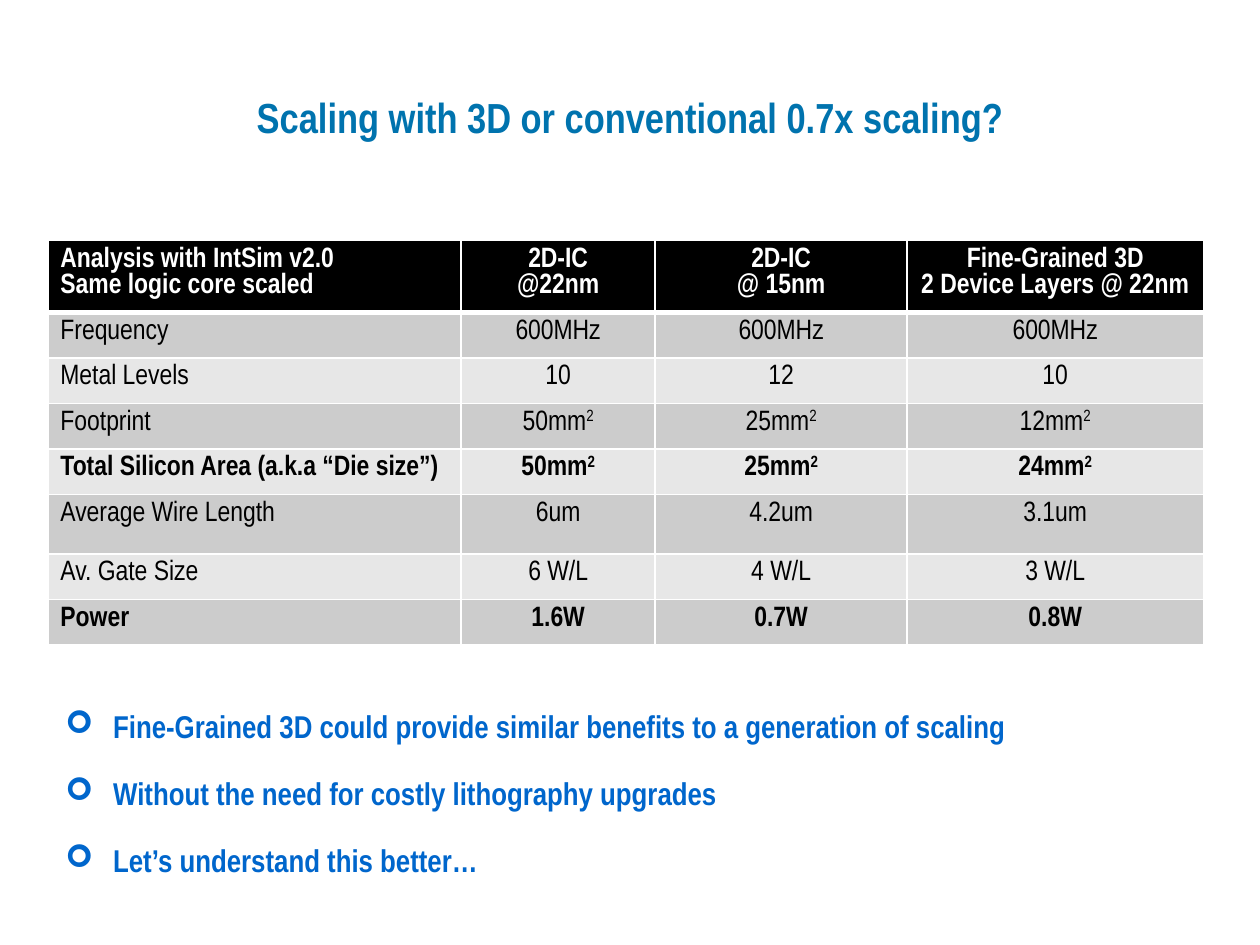
import dataclasses
import pptx
import pptx.dml.color
import pptx.enum.text
import pptx.oxml.ns
import pptx.util
import lxml.etree

ALIGN = pptx.enum.text.PP_ALIGN
ANCHOR = pptx.enum.text.MSO_ANCHOR
COLS, ROWS = 100, 75


@dataclasses.dataclass(frozen=True)
class Theme:
    font: str = "Arial Narrow"
    title: str = "0073AE"
    point: str = "0066CC"
    ink: str = "000000"
    white: str = "FFFFFF"
    bands: tuple = ("CCCCCC", "E7E7E7")
    large: int = 24
    mid: int = 18
    small: int = 16
    thin: int = 1
    thick: int = 3


THEME = Theme()
HEAD = "Scaling with 3D or conventional 0.7x scaling?"
WIDTHS = (3.28, 1.54, 2, 2.35)
HEIGHTS = (0.57, 0.36, 0.36, 0.36, 0.36, 0.47, 0.36, 0.36)
BOLD = (0, 4, 7)
DATA = (
    ("Analysis with IntSim v2.0\nSame logic core scaled", "2D-IC\n@22nm",
     "2D-IC\n@ 15nm", "Fine-Grained 3D\n2 Device Layers @ 22nm"),
    ("Frequency", "600MHz", "600MHz", "600MHz"),
    ("Metal Levels", "10", "12", "10"),
    ("Footprint", "50mm^2", "25mm^2", "12mm^2"),
    ("Total Silicon Area (a.k.a “Die size”)", "50mm^2", "25mm^2", "24mm^2"),
    ("Average Wire Length", "6um", "4.2um", "3.1um"),
    ("Av. Gate Size", "6 W/L", "4 W/L", "3 W/L"),
    ("Power", "1.6W", "0.7W", "0.8W"),
)
POINTS = (
    "Fine-Grained 3D could provide similar benefits to a generation of scaling\n"
    "Without the need for costly lithography upgrades\n"
    "Let’s understand this better…"
)


def tint(code):
    return pptx.dml.color.RGBColor.from_string(code)


def add_node(parent, tag, **attrs):
    node = lxml.etree.SubElement(parent, pptx.oxml.ns.qn(tag))
    for key, value in attrs.items():
        node.set(key, str(value))
    return node


def write(frame, text, size, color, bold=False, align=ALIGN.LEFT,
          lead=None, gap=0, mark=None, dent=0):
    for index, line in enumerate(text.split("\n")):
        para = frame.paragraphs[0] if index == 0 else frame.add_paragraph()
        para.alignment = align
        if lead:
            para.line_spacing = lead
        if index and gap:
            para.space_before = pptx.util.Pt(gap)
        if mark:
            props = para._p.get_or_add_pPr()
            props.set("marL", str(dent))
            props.set("indent", str(-dent))
            add_node(props, "a:buFont", typeface="Wingdings")
            add_node(props, "a:buChar", char=mark)
        for level, part in enumerate(line.split("^")):
            run = para.add_run()
            run.text = part
            font = run.font
            font.name, font.bold = THEME.font, bold
            font.size = pptx.util.Pt(size)
            font.color.rgb = tint(color)
            if level:
                run._r.get_or_add_rPr().set("baseline", "30000")


def edge(cell, side, width):
    props = cell._tc.get_or_add_tcPr()
    line = add_node(props, "a:ln" + side, w=pptx.util.Pt(width))
    fill = add_node(line, "a:solidFill")
    add_node(fill, "a:srgbClr", val=THEME.white)


def draw_title(slide, box):
    title = slide.shapes.title
    title.left, title.top, title.width, title.height = box
    title.text_frame.vertical_anchor = ANCHOR.MIDDLE
    write(title.text_frame, HEAD, THEME.large, THEME.title,
          bold=True, align=ALIGN.CENTER)


def draw_table(slide, box):
    grid = slide.shapes.add_table(len(DATA), len(WIDTHS), *box).table
    for col, share in zip(grid.columns, WIDTHS):
        col.width = int(box[2] * share / sum(WIDTHS))
    for row, share in zip(grid.rows, HEIGHTS):
        row.height = int(box[3] * share / sum(HEIGHTS))
    for r, texts in enumerate(DATA):
        shade = THEME.bands[(r - 1) % 2] if r else THEME.ink
        for c, text in enumerate(texts):
            cell = grid.cell(r, c)
            for side in "LRTB":
                heavy = (r, side) in ((0, "B"), (1, "T"))
                edge(cell, side, THEME.thick if heavy else THEME.thin)
            cell.fill.solid()
            cell.fill.fore_color.rgb = tint(shade)
            write(cell.text_frame, text, THEME.small,
                  THEME.ink if r else THEME.white, bold=r in BOLD,
                  align=ALIGN.CENTER if c else ALIGN.LEFT)


def draw_points(slide, box):
    frame = slide.shapes.add_textbox(*box).text_frame
    frame.word_wrap = True
    write(frame, POINTS, THEME.mid, THEME.point, bold=True, lead=1.5,
          gap=6, mark="➢", dent=pptx.util.Inches(0.38))


def main():
    deck = pptx.Presentation()
    deck.slide_width = pptx.util.Inches(10)
    deck.slide_height = pptx.util.Inches(7.5)
    unit_x, unit_y = deck.slide_width / COLS, deck.slide_height / ROWS

    def place(x, y, w, h):
        return (int(x * unit_x), int(y * unit_y),
                int(w * unit_x), int(h * unit_y))

    slide = deck.slides.add_slide(deck.slide_layouts[5])
    draw_title(slide, place(5, 3, 90, 12.5))
    draw_table(slide, place(3.8, 19.1, 91.7, 32.1))
    draw_points(slide, place(4.2, 54.1, 90, 7))
    deck.save("out.pptx")


if __name__ == "__main__":
    main()
